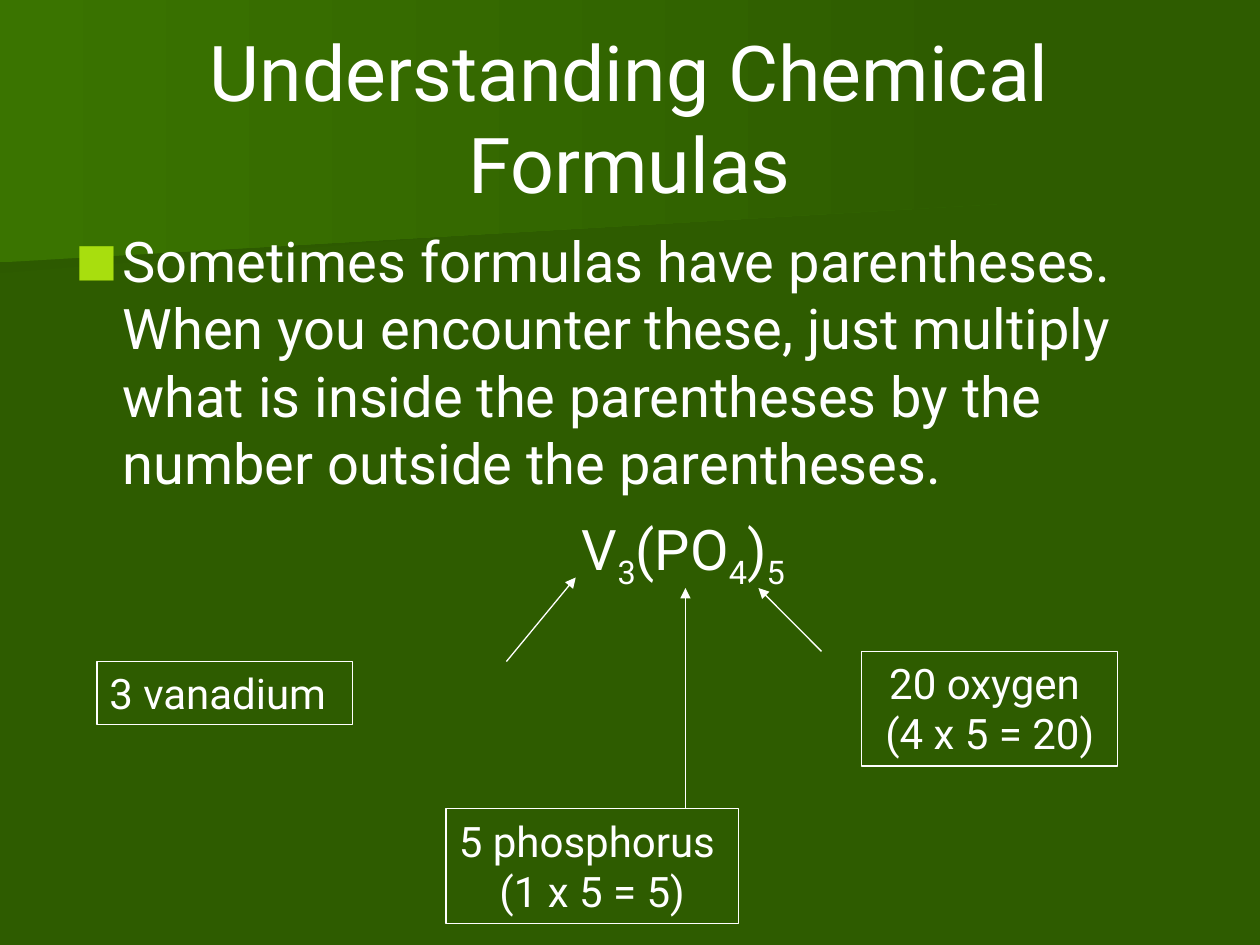
"""Build a slide on reading chemical formulas with parentheses."""
from typing import NamedTuple

from lxml.etree import SubElement
from pptx import Presentation
from pptx.dml.color import RGBColor
from pptx.enum.shapes import MSO_CONNECTOR, MSO_SHAPE
from pptx.enum.text import MSO_ANCHOR as ANCHOR, PP_ALIGN as ALIGN
from pptx.oxml.ns import qn
from pptx.util import Pt

FONT = "Roboto"
WHITE = "FFFFFF"
GREEN = "2E5C00"
LIME = "A8DE0E"


class Box(NamedTuple):
    x: float
    y: float
    w: float
    h: float


class Label(NamedTuple):
    box: Box
    text: str
    align: ALIGN


class Arrow(NamedTuple):
    x1: float
    y1: float
    x2: float
    y2: float


class Wedge(NamedTuple):
    points: list[tuple[float, float]]
    start: str


WEDGES = [
    Wedge([(560.4, 110), (0, 156), (0, 72.7), (560.8, 72.7)], "2D5A00"),
    Wedge([(570, 116.6), (0, 150), (0, 0), (570, 0)], "3A7400"),
]
LABELS = [
    Label(Box(55.4, 378, 146.2, 36), "3 vanadium", ALIGN.LEFT),
    Label(Box(254.9, 462.2, 167, 65.5), "5 phosphorus \n(1 x 5 = 5)", ALIGN.CENTER),
    Label(Box(492.5, 372.2, 146.2, 65.5), "20 oxygen \n(4 x 5 = 20)", ALIGN.CENTER),
]
ARROWS = [
    Arrow(289.4, 378, 329, 330),
    Arrow(391.7, 462.2, 391.7, 336),
    Arrow(469.4, 372.2, 433.4, 336),
]
FORMULA = [("V", False), ("3", True), ("(PO", False), ("4", True), (")", False), ("5", True)]


def rgb(value: str) -> RGBColor:
    return RGBColor.from_string(value)


def style_runs(tf, size: float) -> None:
    for p in tf.paragraphs:
        for r in p.runs:
            r.font.name = FONT
            r.font.size = Pt(size)
            r.font.color.rgb = rgb(WHITE)


def write(sp, text: str, size: float, align: ALIGN, anchor: ANCHOR = ANCHOR.TOP) -> None:
    tf = sp.text_frame
    tf.word_wrap = True
    tf.vertical_anchor = anchor
    tf.text = text
    for p in tf.paragraphs:
        p.alignment = align
    style_runs(tf, size)


def add_text(slide, box: Box):
    return slide.shapes.add_textbox(*map(Pt, box))


def add_wedge(slide, wedge: Wedge) -> None:
    points = [(Pt(x), Pt(y)) for x, y in wedge.points]
    builder = slide.shapes.build_freeform(*points[0])
    builder.add_line_segments(points[1:], close=True)
    sp = builder.convert_to_shape()
    sp.shadow.inherit = False
    sp.line.fill.background()
    sp.fill.gradient()
    sp.fill.gradient_angle = 0
    for stop, color, position in zip(sp.fill.gradient_stops, (wedge.start, GREEN), (0, 1)):
        stop.color.rgb = rgb(color)
        stop.position = position


def add_bullet(p, char: str, color: str, percent: int, indent: float) -> None:
    pPr = p._p.get_or_add_pPr()
    pPr.set("marL", str(Pt(indent)))
    pPr.set("indent", str(-Pt(indent)))
    SubElement(SubElement(pPr, qn("a:buClr")), qn("a:srgbClr")).set("val", color)
    SubElement(pPr, qn("a:buSzPct")).set("val", str(percent * 1000))
    SubElement(pPr, qn("a:buFont")).set("typeface", FONT)
    SubElement(pPr, qn("a:buChar")).set("char", char)


def add_formula(slide, box: Box) -> None:
    tf = add_text(slide, box).text_frame
    tf.word_wrap = True
    for text, is_subscript in FORMULA:
        r = tf.paragraphs[0].add_run()
        r.text = text
        if is_subscript:
            r.font._element.set("baseline", "-25000")
    style_runs(tf, 32)


def add_label(slide, label: Label) -> None:
    sp = slide.shapes.add_shape(MSO_SHAPE.RECTANGLE, *map(Pt, label.box))
    sp.shadow.inherit = False
    sp.fill.background()
    sp.line.color.rgb = rgb(WHITE)
    sp.line.width = Pt(0.75)
    write(sp, label.text, 24, label.align)


def add_arrow(slide, arrow: Arrow) -> None:
    line = slide.shapes.add_connector(MSO_CONNECTOR.STRAIGHT, *map(Pt, arrow))
    line.line.color.rgb = rgb(WHITE)
    line.line.width = Pt(0.75)
    SubElement(line.line._get_or_add_ln(), qn("a:tailEnd")).set("type", "triangle")
    SubElement(line._element.spPr, qn("a:effectLst"))


def main() -> None:
    prs = Presentation()
    prs.slide_width, prs.slide_height = Pt(720), Pt(540)
    slide = prs.slides.add_slide(prs.slide_layouts[6])
    slide.background.fill.solid()
    slide.background.fill.fore_color.rgb = rgb(GREEN)

    for wedge in WEDGES:
        add_wedge(slide, wedge)

    title = add_text(slide, Box(36, 21.6, 648, 90))
    write(title, "Understanding Chemical Formulas", 44, ALIGN.CENTER, ANCHOR.MIDDLE)

    body = add_text(slide, Box(36, 126, 648, 354))
    write(body, "Sometimes formulas have parentheses. When you encounter these, just multiply "
          "what is inside the parentheses by the number outside the parentheses.", 32, ALIGN.LEFT)
    p = body.text_frame.paragraphs[0]
    p.space_before = Pt(6.4)
    add_bullet(p, "■", LIME, 80, 27)

    add_formula(slide, Box(325.4, 290.2, 149.8, 45.4))
    for label in LABELS:
        add_label(slide, label)
    for arrow in ARROWS:
        add_arrow(slide, arrow)
    prs.save("out.pptx")


if __name__ == "__main__":
    main()
